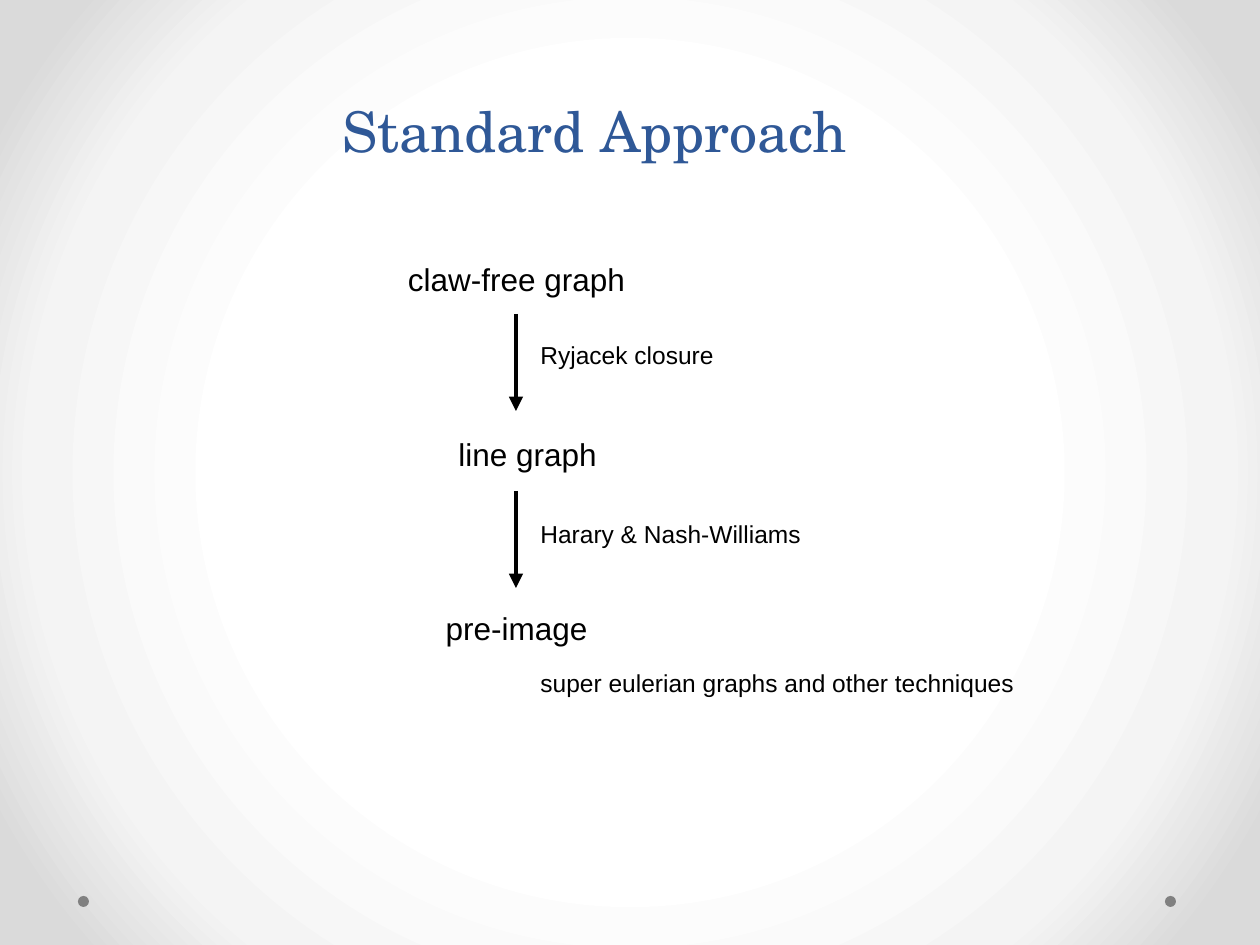
from pptx import Presentation
from pptx.dml.color import RGBColor
from pptx.enum.shapes import MSO_CONNECTOR, MSO_SHAPE
from pptx.enum.text import MSO_ANCHOR, MSO_AUTO_SIZE, PP_ALIGN
from pptx.oxml import parse_xml
from pptx.oxml.ns import nsdecls
from pptx.oxml.xmlchemy import OxmlElement
from pptx.util import Pt

CENTER, LEFT = PP_ALIGN.CENTER, PP_ALIGN.LEFT
BOTTOM, TOP = MSO_ANCHOR.BOTTOM, MSO_ANCHOR.TOP
GROW, FIXED = MSO_AUTO_SIZE.SHAPE_TO_FIT_TEXT, MSO_AUTO_SIZE.NONE

# Content: boxes are left, top, width, height in px
TITLE = ("Standard Approach", (28, 9, 1134, 161))
STAGES = [
    ("claw-free graph", (354, 246, 325, 58)),
    ("line graph", (365, 421, 325, 58)),
    ("pre-image", (354, 595, 325, 54)),
]
NOTES = [
    ("Ryjacek closure", (528, 328, 223, 48)),
    ("Harary & Nash-Williams", (528, 507, 290, 48)),
    ("super eulerian graphs and other techniques", (528, 656, 544, 48)),
]
ARROW_X, ARROW_LENGTH, ARROW_TOPS = 516, 97, (314, 491)
DOT_LEFTS, DOT_TOP, DOT_SIZE = (78, 1165), 896, 11

THEME = {
    "title": {"name": "TeX Gyre Schola", "size": Pt(32), "color": "2F5897"},
    "stage": {"name": "Arial", "size": Pt(18), "color": "000000"},
    "note": {"name": "Arial", "size": Pt(14), "color": "000000"},
    "title_spacing": Pt(58),
    "text_spacing": 1.2,
    "arrow": "000000",
    "arrow_width": Pt(2.75),
    "dot": "808080",
    "glow": [(50, "FFFFFF"), (76, "F4F4F4"), (92, "DADADA")],
}


def px(n):
    return round(n * 914400 / 126)


def place(shape, box):
    for name, value in zip(("left", "top", "width", "height"), box):
        setattr(shape, name, px(value))


def write(shape, text, style, align, spacing, anchor=TOP, fit=GROW):
    tf = shape.text_frame
    for name, value in {"word_wrap": True, "vertical_anchor": anchor,
                        "auto_size": fit}.items():
        setattr(tf, name, value)
    p = tf.paragraphs[0]
    p.alignment, p.line_spacing = align, spacing
    r = p.add_run()
    r.text = text
    for name, value in THEME[style].items():
        if name == "color":
            r.font.color.rgb = RGBColor.from_string(value)
        else:
            setattr(r.font, name, value)


def add_background(s):
    stops = "".join(
        f'<a:gs pos="{pos * 1000}"><a:srgbClr val="{color}"/></a:gs>'
        for pos, color in THEME["glow"])
    bg = parse_xml(
        f'<p:bg {nsdecls("p", "a")}><p:bgPr><a:gradFill rotWithShape="1">'
        f'<a:gsLst>{stops}</a:gsLst><a:path path="circle">'
        '<a:fillToRect l="50000" t="50000" r="50000" b="50000"/></a:path>'
        '</a:gradFill><a:effectLst/></p:bgPr></p:bg>')
    s.element.cSld.insert(0, bg)


def add_dot(s, left):
    dot = s.shapes.add_shape(MSO_SHAPE.OVAL, 0, 0, 0, 0)
    place(dot, (left, DOT_TOP, DOT_SIZE, DOT_SIZE))
    dot.shadow.inherit = False
    dot.fill.solid()
    dot.fill.fore_color.rgb = RGBColor.from_string(THEME["dot"])
    dot.line.fill.background()


def add_arrow(s, top):
    x = px(ARROW_X)
    arrow = s.shapes.add_connector(
        MSO_CONNECTOR.STRAIGHT, x, px(top), x, px(top + ARROW_LENGTH))
    arrow.line.color.rgb = RGBColor.from_string(THEME["arrow"])
    arrow.line.width = THEME["arrow_width"]
    tail = OxmlElement("a:tailEnd")
    tail.set("type", "triangle")
    arrow.line._get_or_add_ln().append(tail)
    arrow.element.spPr.append(OxmlElement("a:effectLst"))


def main():
    prs = Presentation()
    prs.slide_width, prs.slide_height = px(1260), px(945)
    s = prs.slides.add_slide(prs.slide_layouts[5])
    add_background(s)

    # Title
    text, box = TITLE
    place(s.shapes.title, box)
    write(s.shapes.title, text, "title", CENTER, THEME["title_spacing"],
          BOTTOM, FIXED)

    # Corner dots
    for left in DOT_LEFTS:
        add_dot(s, left)

    # Stages, arrows between them, and notes beside the arrows
    for items, style, align in ((STAGES, "stage", CENTER), (NOTES, "note", LEFT)):
        for text, box in items:
            tb = s.shapes.add_textbox(0, 0, 0, 0)
            place(tb, box)
            write(tb, text, style, align, THEME["text_spacing"])
    for top in ARROW_TOPS:
        add_arrow(s, top)

    prs.save("out.pptx")


if __name__ == "__main__":
    main()
